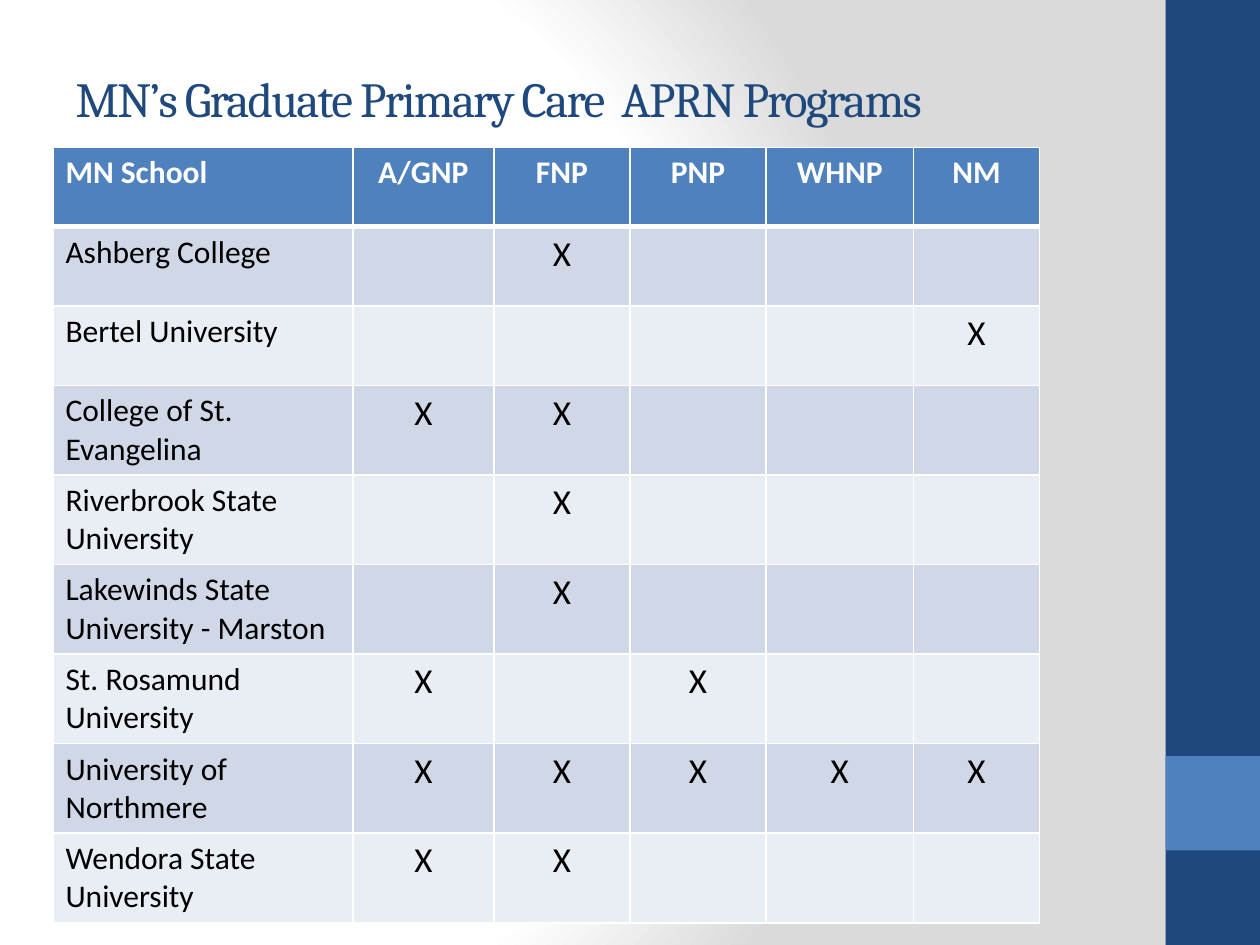
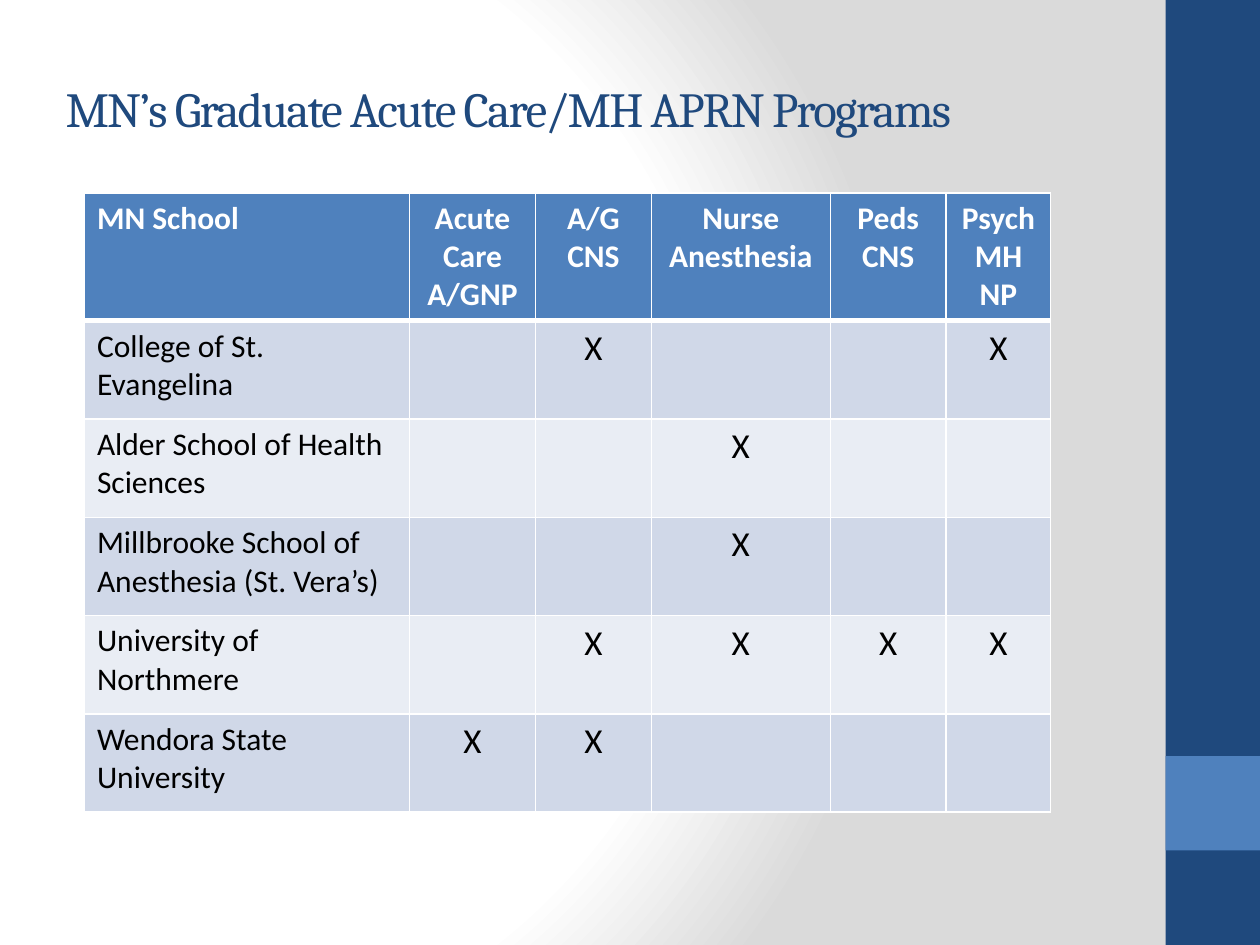
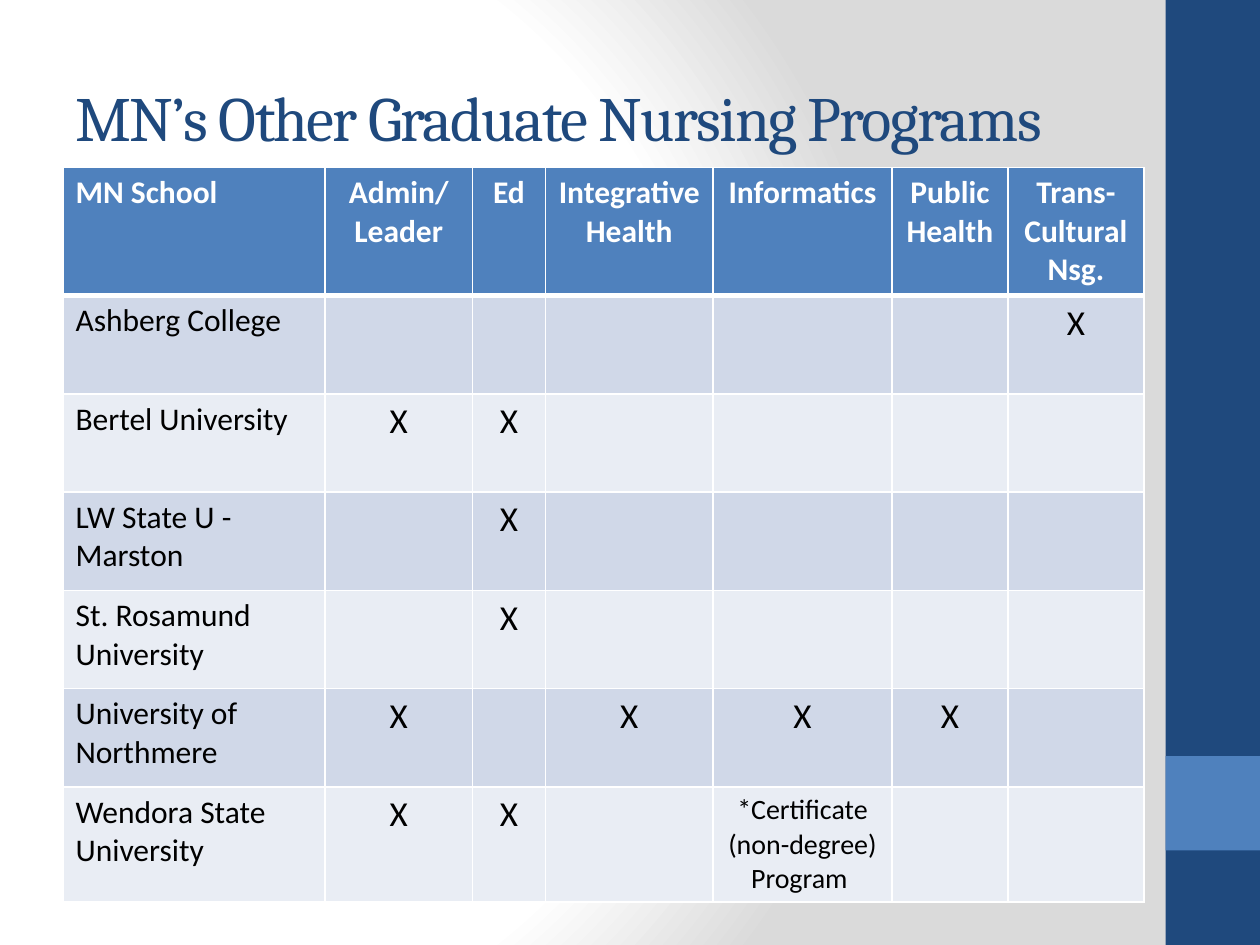
from dataclasses import dataclass

import lxml.etree
import pptx
import pptx.dml.color
import pptx.enum.shapes
import pptx.enum.text
import pptx.oxml
import pptx.oxml.ns
import pptx.presentation
import pptx.slide
import pptx.table
import pptx.util

Inches = pptx.util.Inches
qn = pptx.oxml.ns.qn


@dataclass(frozen=True)
class Theme:
    navy: str = "1F497D"
    blue: str = "4F81BD"
    white: str = "FFFFFF"
    grey: str = "DADADA"
    black: str = "000000"
    row_bands: tuple[str, str] = ("D0D8E8", "E9EDF4")
    title_font: str = "Cambria"
    table_font: str = "Calibri"
    title_size: int = 28
    large_title_size: int = 36
    label_size: int = 18
    mark_size: int = 20
    note_size: int = 16
    grid_line: float = 1
    header_line: float = 3


@dataclass(frozen=True)
class Band:
    top: float
    height: float
    color: str


@dataclass(frozen=True)
class School:
    name: str
    offers: str  # one sign per programme: X offered, * certificate, - none


@dataclass(frozen=True)
class ProgramSlide:
    title: str
    title_size: int
    title_box: tuple[float, float, float, float]
    table_at: tuple[float, float]
    widths: tuple[float, ...]
    row_height: float
    programs: tuple[str, ...]
    schools: tuple[School, ...]


THEME = Theme()
BAND_LEFT, BAND_WIDTH = 9.25, 0.75
BANDS = (Band(0, 7.5, THEME.navy), Band(6, 0.75, THEME.blue))
SIGNS = {
    "-": ("", THEME.mark_size),
    "X": ("X", THEME.mark_size),
    "*": ("*Certificate (non-degree) Program ", THEME.note_size),
}

SLIDES = (
    ProgramSlide(
        "MN’s Graduate Primary Care  APRN Programs", THEME.title_size,
        (0.5, 0.3, 8.33, 0.95), (0.42, 1.17),
        (2.38, 1.12, 1.08, 1.08, 1.17, 1), 0.63,
        ("A/GNP", "FNP", "PNP", "WHNP", "NM"),
        (
            School("Ashberg College", "-X---"),
            School("Bertel University", "----X"),
            School("College of St. Evangelina", "XX---"),
            School("Riverbrook State University", "-X---"),
            School("Lakewinds State University - Marston", "-X---"),
            School("St. Rosamund University", "X-X--"),
            School("University of Northmere", "XXXXX"),
            School("Wendora State University", "XX---"),
        ),
    ),
    ProgramSlide(
        "MN’s Graduate Acute Care/MH APRN Programs", THEME.title_size,
        (0.42, 0.3, 8.42, 1.12), (0.67, 1.53),
        (2.58, 1, 0.92, 1.42, 0.92, 0.83), 0.78,
        ("Acute Care A/GNP", "A/G\nCNS", "Nurse\nAnesthesia", "Peds\nCNS", "Psych MH NP"),
        (
            School("College of St. Evangelina", "-X--X"),
            School("Alder School of Health Sciences", "--X--"),
            School("Millbrooke School of Anesthesia (St. Vera’s)", "--X--"),
            School("University of Northmere", "-XXXX"),
            School("Wendora State University", "XX---"),
        ),
    ),
    ProgramSlide(
        "MN’s Other Graduate Nursing Programs", THEME.large_title_size,
        (0.5, 0.3, 8.33, 1.25), (0.5, 1.33),
        (2.08, 1.17, 0.58, 1.33, 1.42, 0.92, 1.08), 0.78,
        ("Admin/\nLeader", "Ed", "Integrative\nHealth", "Informatics",
         "Public\nHealth", "Trans-Cultural Nsg."),
        (
            School("Ashberg College", "-----X"),
            School("Bertel University", "XX----"),
            School("LW State U - Marston", "-X----"),
            School("St. Rosamund University", "-X----"),
            School("University of Northmere", "X-XXX-"),
            School("Wendora State University", "XX-*--"),
        ),
    ),
)


def rgb(color: str) -> pptx.dml.color.RGBColor:
    return pptx.dml.color.RGBColor.from_string(color)


def style_font(font, name: str, size: int, color: str, bold: bool = False) -> None:
    font.name, font.size, font.bold = name, pptx.util.Pt(size), bold
    font.color.rgb = rgb(color)


# Shared background and side bands
def set_background(master: pptx.slide.SlideMaster) -> None:
    master.background.fill.solid()
    bg = master.element.find(".//" + qn("p:bgPr"))
    bg.remove(bg.find(qn("a:solidFill")))
    stops = ((0, THEME.white), (75000, THEME.white), (100000, THEME.grey))
    gs = "".join(f'<a:gs pos="{pos}"><a:srgbClr val="{c}"/></a:gs>' for pos, c in stops)
    bg.insert(0, pptx.oxml.parse_xml(
        f'<a:gradFill {pptx.oxml.ns.nsdecls("a")} rotWithShape="1"><a:gsLst>{gs}</a:gsLst>'
        '<a:path path="circle"><a:fillToRect l="20000" t="50000" r="100000" b="50000"/>'
        '</a:path></a:gradFill>'))


def add_bands(master: pptx.slide.SlideMaster, slide: pptx.slide.Slide) -> None:
    """Draw the bands on a slide, then move them to the master."""
    tree = master.shapes.element
    for i, band in enumerate(BANDS):
        sp = slide.shapes.add_shape(
            pptx.enum.shapes.MSO_SHAPE.RECTANGLE, Inches(BAND_LEFT), Inches(band.top),
            Inches(BAND_WIDTH), Inches(band.height))
        sp.shadow.inherit = False
        sp.fill.solid()
        sp.fill.fore_color.rgb = rgb(band.color)
        sp.line.fill.background()
        sp.element.nvSpPr.cNvPr.set("id", str(100 + i))
        tree.insert(2 + i, sp.element)


# Title
def set_title(slide: pptx.slide.Slide, item: ProgramSlide) -> None:
    sp = slide.shapes.title
    sp.left, sp.top, sp.width, sp.height = map(Inches, item.title_box)
    tf = sp.text_frame
    tf.text = item.title
    tf.word_wrap = True
    tf.auto_size = pptx.enum.text.MSO_AUTO_SIZE.NONE
    tf.vertical_anchor = pptx.enum.text.MSO_ANCHOR.MIDDLE
    p = tf.paragraphs[0]
    p.alignment = pptx.enum.text.PP_ALIGN.LEFT
    r = p.runs[0]
    style_font(r.font, THEME.title_font, item.title_size, THEME.navy)
    r.font._element.set("spc", "-100")


# Table
def set_borders(cell: pptx.table._Cell, top: float, bottom: float) -> None:
    tc_pr = cell._tc.get_or_add_tcPr()
    side = THEME.grid_line
    for tag, width in (("lnL", side), ("lnR", side), ("lnT", top), ("lnB", bottom)):
        ln = lxml.etree.SubElement(tc_pr, qn(f"a:{tag}"), w=str(pptx.util.Pt(width)))
        fill = lxml.etree.SubElement(ln, qn("a:solidFill"))
        lxml.etree.SubElement(fill, qn("a:srgbClr"), val=THEME.white)


def fill_cell(cell: pptx.table._Cell, row: int, col: int, text: str, size: int) -> None:
    header = row == 0
    set_borders(cell,
                THEME.header_line if row == 1 else THEME.grid_line,
                THEME.header_line if header else THEME.grid_line)
    cell.fill.solid()
    cell.fill.fore_color.rgb = rgb(THEME.blue if header else THEME.row_bands[(row - 1) % 2])
    if not text:
        return
    cell.text_frame.text = text
    align = pptx.enum.text.PP_ALIGN
    for p in cell.text_frame.paragraphs:
        p.alignment = align.CENTER if col else align.LEFT
        for r in p.runs:
            style_font(r.font, THEME.table_font, size,
                       THEME.white if header else THEME.black, header)


def add_program_table(slide: pptx.slide.Slide, item: ProgramSlide) -> None:
    label = THEME.label_size
    rows = [[(text, label) for text in ("MN School", *item.programs)]]
    rows += [[(s.name, label), *(SIGNS[sign] for sign in s.offers)] for s in item.schools]
    left, top = item.table_at
    table = slide.shapes.add_table(
        len(rows), len(item.widths), Inches(left), Inches(top),
        Inches(sum(item.widths)), Inches(item.row_height * len(rows))).table
    for column, width in zip(table.columns, item.widths):
        column.width = Inches(width)
    for i, row in enumerate(rows):
        table.rows[i].height = Inches(item.row_height)
        for j, (text, size) in enumerate(row):
            fill_cell(table.cell(i, j), i, j, text, size)


def main() -> None:
    prs = pptx.Presentation()
    prs.slide_width, prs.slide_height = Inches(10), Inches(7.5)
    title_only = prs.slide_layouts.get_by_name("Title Only")
    set_background(prs.slide_master)
    for item in SLIDES:
        slide = prs.slides.add_slide(title_only)
        set_title(slide, item)
        add_program_table(slide, item)
    add_bands(prs.slide_master, prs.slides[0])
    prs.save("out.pptx")


if __name__ == "__main__":
    main()
